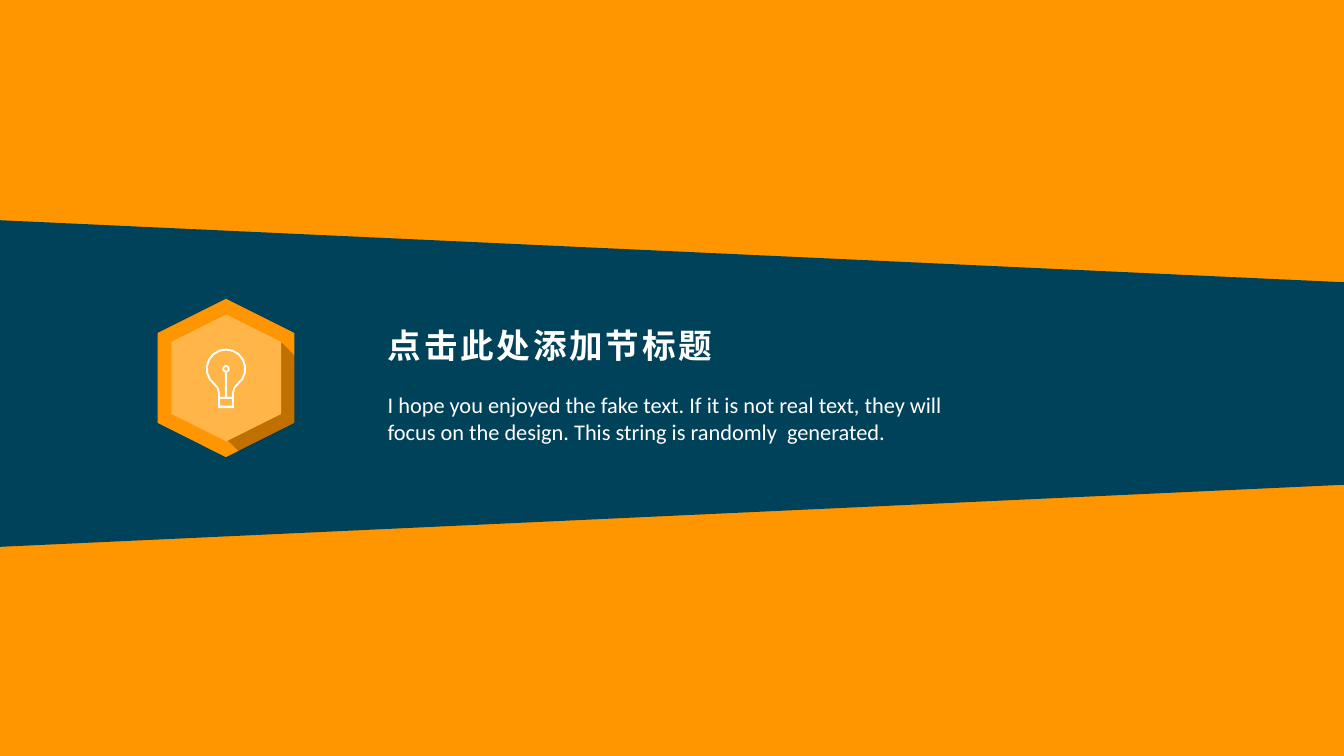
from collections import namedtuple
from dataclasses import dataclass
from math import cos, radians, sin

from lxml import etree
from pptx import Presentation
from pptx import util as u
from pptx.dml.color import RGBColor
from pptx.enum import shapes, text
from pptx.oxml.ns import qn

Box = namedtuple("Box", "left top width height")  # centimetres


@dataclass(frozen=True)
class Theme:
    orange: str = "FF9600"
    light_orange: str = "FFB547"
    navy: str = "00425A"
    white: str = "FFFFFF"
    black: str = "000000"
    font: str = "Calibri"
    title_size: int = 24
    body_size: int = 16


THEME = Theme()
PAGE = Box(0, 0, 33.87, 19.05)
BAND = Box(0, 5.55, 33.87, 8.23)
BADGE = Box(3.97, 7.53, 3.45, 3.99)
HEADING = Box(9.52, 8.07, 15.32, 3.29)


def paint(shape, color, opacity=None):
    """Give a shape a flat fill, with opacity in percent, and no line or shadow."""
    shape.shadow.inherit = False
    shape.line.fill.background()
    shape.fill.solid()
    shape.fill.fore_color.rgb = RGBColor.from_string(color)
    if opacity is not None:
        tone = shape.fill._xPr.find(f"{qn('a:solidFill')}/{qn('a:srgbClr')}")
        etree.SubElement(tone, qn("a:alpha"), val=str(opacity * 1000))


def add_upright(page, kind, box, color, adjust=None):
    """Place a preset shape turned by 90 degrees so that it covers the box."""
    center_x, center_y = box.left + box.width / 2, box.top + box.height / 2
    shape = page.shapes.add_shape(
        kind, u.Cm(center_x - box.height / 2), u.Cm(center_y - box.width / 2),
        u.Cm(box.height), u.Cm(box.width))
    shape.rotation = 90
    if adjust is not None:
        shape.adjustments[0] = adjust
    paint(shape, color)


def add_outline(page, center, contours, color, opacity=None):
    """Draw closed contours, given in centimetres from the center, as one shape."""
    placed = [[(u.Cm(center[0] + x), u.Cm(center[1] + y)) for x, y in contour]
              for contour in contours]
    builder = page.shapes.build_freeform(*placed[0][0])
    for number, contour in enumerate(placed):
        if number:
            builder.move_to(*contour[0])
        builder.add_line_segments(contour[1:], close=True)
    paint(builder.convert_to_shape(), color, opacity)


def arc(radius, start, end, steps):
    """Points of an arc; angles run clockwise from straight down."""
    angles = [radians(start + (end - start) * step / steps) for step in range(steps + 1)]
    return [(-radius * sin(angle), radius * cos(angle)) for angle in angles]


def mirror(points):
    return [(-x, y) for x, y in reversed(points)]


def add_bulb(page, center):
    outer_neck = [(-0.2, 0.99), (-0.2, 0.61), (-0.23, 0.49)]
    inner_neck = [(-0.03, 0.71), (-0.15, 0.71), (-0.15, 0.61), (-0.19, 0.47)]
    glass = outer_neck + arc(0.51, 36, 324, 14) + mirror(outer_neck)
    inside = inner_neck + arc(0.46, 36, 324, 14) + mirror(inner_neck) + arc(0.1, 345, 15, 6)
    base = [(-0.15, 0.76), (0.15, 0.76), (0.15, 0.93), (-0.15, 0.93)]
    filament = arc(0.05, 0, 300, 5)
    add_outline(page, center, [glass, inside, base, filament], THEME.white)


def add_badge(page, box):
    center_x, center_y = box.left + box.width / 2, box.top + box.height / 2
    inner = Box(center_x - 1.38, center_y - 1.6, 2.77, 3.2)
    shadow = [(1.41, -0.89), (1.73, -0.56), (1.73, 1.14), (0.32, 1.85), (-0.95, 0.58)]
    hexagon = shapes.MSO_SHAPE.HEXAGON
    add_upright(page, hexagon, box, THEME.orange)
    add_outline(page, (center_x, center_y), [shadow], THEME.black, 25)
    add_upright(page, hexagon, inner, THEME.light_orange)
    add_bulb(page, (center_x, center_y - 0.23))


def add_text(page, box, words, wrap, font, spacing=None):
    frame = page.shapes.add_textbox(*(u.Cm(length) for length in box)).text_frame
    frame.word_wrap = wrap
    frame.auto_size = text.MSO_AUTO_SIZE.SHAPE_TO_FIT_TEXT
    span = frame.paragraphs[0].add_run()
    span.text = words
    for name, value in {"name": THEME.font, **font}.items():
        setattr(span.font, name, value)
    span.font.color.rgb = RGBColor.from_string(THEME.white)
    if spacing is not None:
        span._r.get_or_add_rPr().set("spc", str(spacing * 100))


def add_heading(page, box):
    title = Box(box.left, box.top, 8.84, 1.27)
    body = Box(box.left, box.top + 1.66, box.width, 1.63)
    add_text(page, body,
             "I hope you enjoyed the fake text. If it is not real text, they will "
             "focus on the design. This string is randomly  generated.",
             True, {"size": u.Pt(THEME.body_size)})
    add_text(page, title, "点击此处添加节标题", False,
             {"size": u.Pt(THEME.title_size), "bold": True}, spacing=2)


def add_section_page(deck):
    page = deck.slides.add_slide(deck.slide_layouts[6])
    page.background.fill.solid()
    page.background.fill.fore_color.rgb = RGBColor.from_string(THEME.orange)
    add_upright(page, shapes.MSO_SHAPE.TRAPEZOID, BAND, THEME.navy, 0.19)
    add_heading(page, HEADING)
    add_badge(page, BADGE)


def main():
    deck = Presentation()
    deck.slide_width, deck.slide_height = u.Cm(PAGE.width), u.Cm(PAGE.height)
    add_section_page(deck)
    deck.save("out.pptx")


if __name__ == "__main__":
    main()
